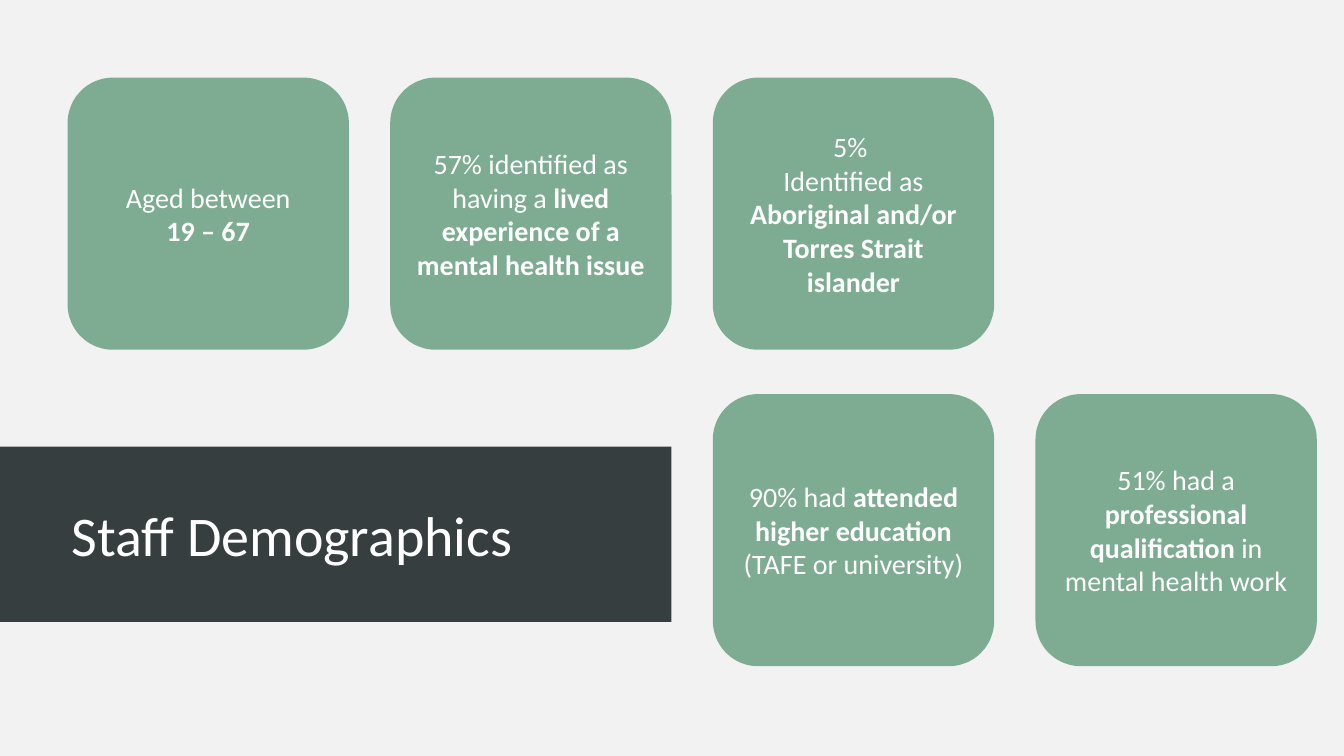
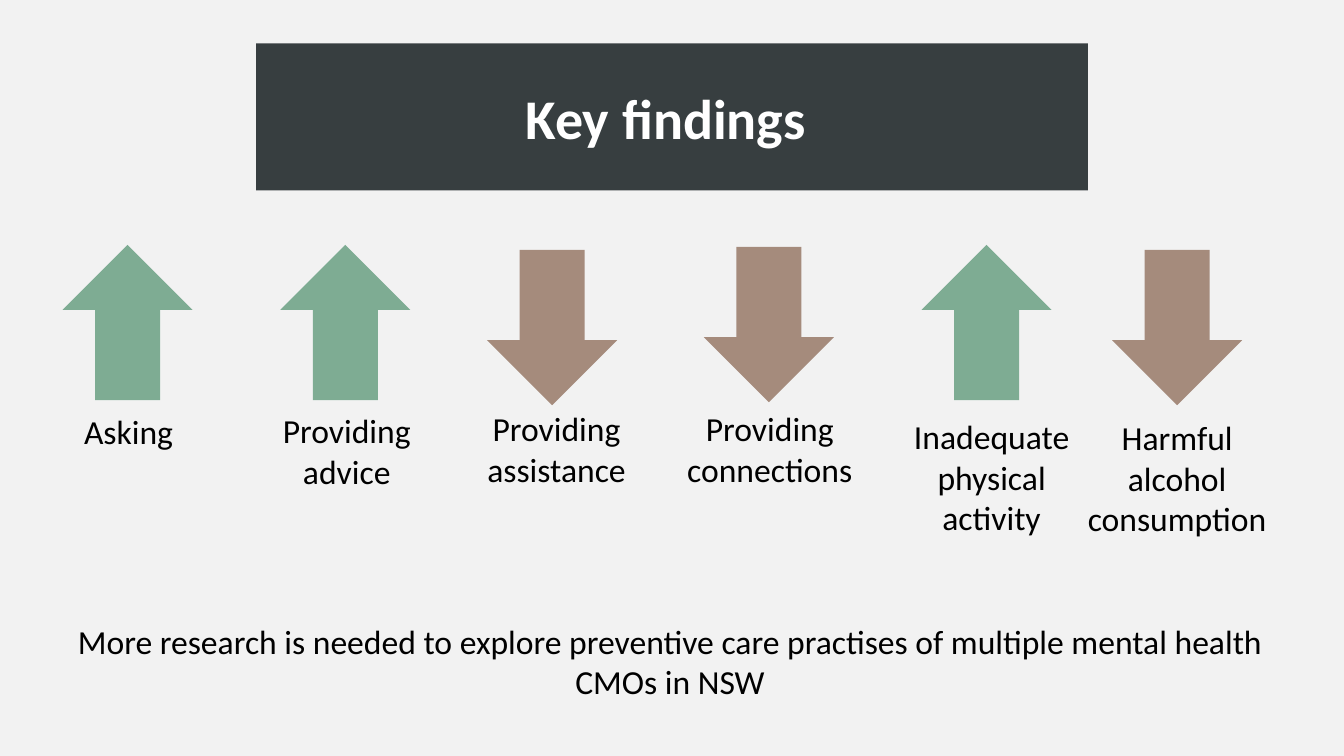
import dataclasses

import pptx
import pptx.dml.color
import pptx.enum.shapes
import pptx.enum.text
import pptx.util

Inches = pptx.util.Inches
Color = pptx.dml.color.RGBColor.from_string
Shape = pptx.enum.shapes.MSO_SHAPE
Align = pptx.enum.text.PP_ALIGN


@dataclasses.dataclass(frozen=True)
class Theme:
    font: str = "Calibri"
    background: str = "F2F2F2"
    band: str = "373E40"
    green: str = "7EAC93"
    brown: str = "A58B7C"
    light: str = "FFFFFF"
    dark: str = "000000"
    title_size: int = 40
    card_size: int = 20
    label_size: int = 24


theme = Theme()


def write(frame, paragraphs, size, color, align=Align.CENTER):
    frame.word_wrap = True
    for index, runs in enumerate(paragraphs):
        para = frame.paragraphs[0] if index == 0 else frame.add_paragraph()
        para.alignment = align
        for text, bold in runs:
            span = para.add_run()
            span.text = text
            span.font.name = theme.font
            span.font.size = pptx.util.Pt(size)
            span.font.bold = bold
            span.font.color.rgb = Color(color)


def add_filled(page, kind, left, top, width, height, color):
    shape = page.shapes.add_shape(
        kind, Inches(left), Inches(top), Inches(width), Inches(height))
    shape.shadow.inherit = False
    shape.fill.solid()
    shape.fill.fore_color.rgb = Color(color)
    shape.line.fill.background()
    return shape


deck = pptx.Presentation()
deck.slide_width = Inches(13.33)
deck.slide_height = Inches(7.5)
master_fill = deck.slide_master.background.fill
master_fill.solid()
master_fill.fore_color.rgb = Color(theme.background)

titles = [
    ("Staff Demographics", False, Align.LEFT, 0.72, (-0.01, 4.43, 6.67, 1.74)),
    ("Key findings ", True, Align.CENTER, 0.1, (2.54, 0.43, 8.25, 1.46)),
]
pages = []
for text, bold, align, inset, bounds in titles:
    page = deck.slides.add_slide(deck.slide_layouts[5])
    title = page.shapes.title
    title.left, title.top, title.width, title.height = map(Inches, bounds)
    title.fill.solid()
    title.fill.fore_color.rgb = Color(theme.band)
    frame = title.text_frame
    frame.auto_size = pptx.enum.text.MSO_AUTO_SIZE.NONE
    frame.vertical_anchor = pptx.enum.text.MSO_ANCHOR.MIDDLE
    frame.margin_left = Inches(inset)
    write(frame, [[(text, bold)]], theme.title_size, theme.light, align)
    pages.append(page)
demographics, findings = pages

cards = [
    (0, 0, [[("Aged between", False)], [("19 – 67", True)]]),
    (1, 0, [[("57% identified as having a ", False),
             ("lived experience of a mental health issue", True)]]),
    (2, 0, [[("5% ", False)],
            [("Identified as ", False),
             ("Aboriginal and/or Torres Strait islander", True)]]),
    (2, 1, [[("90% had ", False), ("attended higher education ", True),
             ("(TAFE or university)", False)]]),
    (3, 1, [[("51% had a ", False), ("professional qualification ", True),
             ("in mental health work", False)]]),
]
for column, row, paragraphs in cards:
    card = add_filled(demographics, Shape.ROUNDED_RECTANGLE,
                      0.67 + 3.2 * column, 0.77 + 3.14 * row, 2.79, 2.7, theme.green)
    card.text_frame.vertical_anchor = pptx.enum.text.MSO_ANCHOR.MIDDLE
    write(card.text_frame, paragraphs, theme.card_size, theme.light)

arrows = [
    (0.62, 2.43, True),
    (2.78, 2.43, True),
    (4.83, 2.48, False),
    (6.98, 2.45, False),
    (9.14, 2.43, True),
    (11.03, 2.48, False),
]
for left, top, rising in arrows:
    arrow = add_filled(findings, Shape.UP_ARROW, left, top, 1.29, 1.54,
                       theme.green if rising else theme.brown)
    arrow.rotation = 0 if rising else 180

labels = [
    ("Asking", 0.73, 4.03, 1.09, 1),
    ("Providing advice", 2.66, 4.02, 1.56, 2),
    ("Providing assistance", 4.57, 4, 1.9, 2),
    ("Providing connections", 6.63, 4, 2.01, 2),
    ("Inadequate physical activity", 8.83, 4.08, 2.01, 3),
    ("Harmful alcohol consumption", 10.67, 4.09, 2.01, 3),
    ("More research is needed to explore preventive care practises of "
     "multiple mental health CMOs in NSW", 0.62, 6.11, 12.05, 2),
]
for text, left, top, width, lines in labels:
    box = findings.shapes.add_textbox(
        Inches(left), Inches(top), Inches(width), Inches(0.1 + 0.4 * lines))
    box.text_frame.auto_size = pptx.enum.text.MSO_AUTO_SIZE.SHAPE_TO_FIT_TEXT
    write(box.text_frame, [[(text, False)]], theme.label_size, theme.dark)

deck.save("out.pptx")
